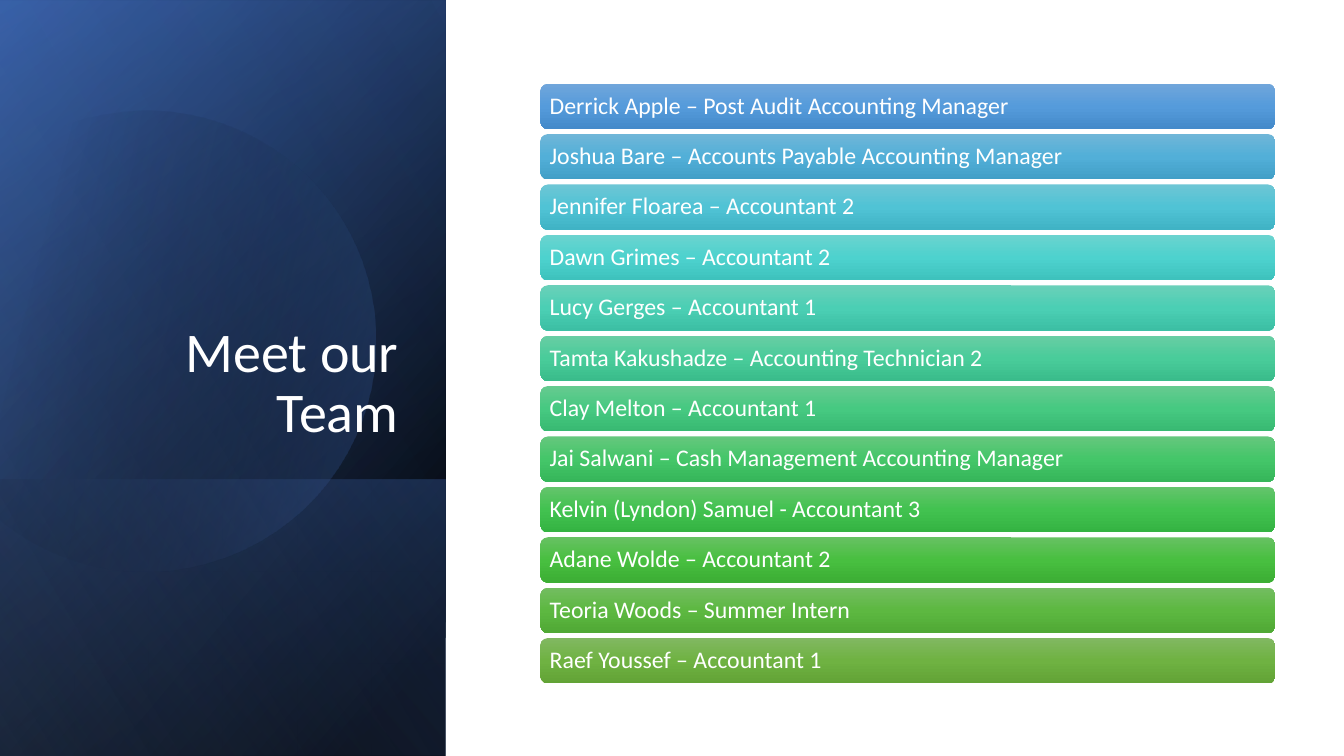
from dataclasses import dataclass
from math import cos, radians, sin

from lxml.etree import SubElement
from pptx import Presentation
from pptx.dml.color import RGBColor
from pptx.enum.shapes import MSO_SHAPE
from pptx.enum.text import MSO_ANCHOR, PP_ALIGN
from pptx.oxml.ns import qn
from pptx.shapes.autoshape import Shape
from pptx.slide import Slide
from pptx.util import Inches, Pt

FONT = "Calibri"
COLORS = {
    "white": "FFFFFF",
    "black": "000000",
    "navy": "2F5597",
    "blue": "4472C4",
    "pale blue": "8FAADC",
}


@dataclass
class Stop:
    position: int
    color: str
    opacity: int = 100


@dataclass
class Panel:
    left: float
    top: float
    width: float
    angle: int
    stops: list[Stop]


@dataclass
class Member:
    label: str
    light: str
    middle: str
    dark: str


PANEL_HEIGHT = 4.42
BASE_PANELS = [
    Panel(-1.54, 1.54, 7.5, 50, [Stop(8, COLORS["black"]), Stop(100, COLORS["navy"])]),
    Panel(-1.54, 1.55, 7.5, 30, [Stop(0, COLORS["black"], 0), Stop(99, COLORS["blue"], 46)]),
    Panel(0.84, 3.92, 2.74, 130, [Stop(2, COLORS["blue"], 29), Stop(100, COLORS["black"], 30)]),
]
TOP_PANEL = Panel(-1.54, 1.54, 7.5, 120, [Stop(0, COLORS["black"], 0), Stop(99, COLORS["pale blue"], 11)])

# Outline of the disc as it lies on the slide: Bezier curves and straight edges
DISC_START = (1.49, 1.1)
DISC_SEGMENTS = [
    [(2.46, 1.12), (3.35, 1.77), (3.63, 2.75)],
    [(3.98, 3.97), (3.28, 5.23), (2.07, 5.58)],
    [(1.31, 5.8), (0.53, 5.61), (-0.03, 5.14)],
    [(-0.15, 5.03)],
    [(-0.15, 1.75)],
    [(0, 1.61)],
    [(0.23, 1.42), (0.5, 1.28), (0.8, 1.19)],
    [(1.03, 1.13), (1.26, 1.1), (1.49, 1.1)],
]
DISC_CENTER = (1.58, 3.35)
DISC_ROTATION = 343.9
CURVE_STEPS = 20

MEMBERS = [
    Member("Derrick Apple – Post Audit Accounting Manager", "71A6DB", "559BDB", "448ACA"),
    Member("Joshua Bare – Accounts Payable Accounting Manager", "6FB6D8", "52AFD8", "429FC7"),
    Member("Jennifer Floarea – Accountant 2", "6DC6D5", "50C3D5", "40B3C5"),
    Member("Dawn Grimes – Accountant 2", "6BD3CF", "4DD2CE", "3EC2BD"),
    Member("Lucy Gerges – Accountant 1", "6AD0B9", "4BCFB4", "3CBFA4"),
    Member("Tamta Kakushadze – Accounting Technician 2", "68CDA4", "49CC9A", "3ABC8B"),
    Member("Clay Melton – Accountant 1", "66CA90", "46C981", "38B972"),
    Member("Jai Salwani – Cash Management Accounting Manager", "65C77D", "44C669", "36B65A"),
    Member("Kelvin (Lyndon) Samuel - Accountant 3", "64C46C", "42C250", "34B342"),
    Member("Adane Wolde – Accountant 2", "67C162", "48BF40", "3CAE34"),
    Member("Teoria Woods – Summer Intern", "73BD61", "5DB841", "50A935"),
    Member("Raef Youssef – Accountant 1", "81B861", "6FB242", "62A336"),
]
BAR_LEFT, BAR_TOP, BAR_WIDTH, BAR_HEIGHT, BAR_PITCH = 5.36, 0.83, 7.29, 0.45, 0.5
BAR_INSET = 0.07


def fill_gradient(shape: Shape, stops: list[Stop], angle: int) -> None:
    """Fill a shape with a linear gradient, without outline or shadow."""
    shape.shadow.inherit = False
    shape.line.fill.background()
    shape.fill.gradient()
    gradient = shape.element.spPr.find(qn("a:gradFill"))
    gradient.clear()
    gradient.set("rotWithShape", "1")
    stop_list = SubElement(gradient, qn("a:gsLst"))
    for stop in stops:
        entry = SubElement(stop_list, qn("a:gs"), pos=str(stop.position * 1000))
        color = SubElement(entry, qn("a:srgbClr"), val=stop.color)
        if stop.opacity < 100:
            SubElement(color, qn("a:alpha"), val=str(stop.opacity * 1000))
    SubElement(gradient, qn("a:lin"), ang=str(angle * 60000), scaled="0")


def add_panel(slide: Slide, panel: Panel) -> None:
    shape = slide.shapes.add_shape(
        MSO_SHAPE.RECTANGLE, Inches(panel.left), Inches(panel.top), Inches(panel.width), Inches(PANEL_HEIGHT)
    )
    shape.rotation = 90
    shape.element.spPr.find(qn("a:xfrm")).set("flipH", "1")
    fill_gradient(shape, panel.stops, panel.angle)


def disc_points() -> list[tuple[float, float]]:
    """Trace the disc, sampling each cubic curve evenly."""
    points = [DISC_START]
    for segment in DISC_SEGMENTS:
        if len(segment) == 1:
            points += segment
            continue
        corners = [points[-1], *segment]
        for step in range(1, CURVE_STEPS + 1):
            t = step / CURVE_STEPS
            weights = [(1 - t) ** 3, 3 * t * (1 - t) ** 2, 3 * t**2 * (1 - t), t**3]
            x, y = (sum(w * corner[axis] for w, corner in zip(weights, corners)) for axis in (0, 1))
            points.append((x, y))
    return points


def unrotate(point: tuple[float, float]) -> tuple[int, int]:
    """Turn a point back about the disc centre, ready for the shape's own rotation."""
    turn = radians(-DISC_ROTATION)
    x, y = point[0] - DISC_CENTER[0], point[1] - DISC_CENTER[1]
    return (
        Inches(DISC_CENTER[0] + x * cos(turn) - y * sin(turn)),
        Inches(DISC_CENTER[1] + x * sin(turn) + y * cos(turn)),
    )


def add_disc(slide: Slide) -> None:
    first, *rest = [unrotate(point) for point in disc_points()]
    builder = slide.shapes.build_freeform(*first)
    builder.add_line_segments(rest, close=True)
    disc = builder.convert_to_shape()
    disc.rotation = DISC_ROTATION
    fill_gradient(disc, [Stop(29, COLORS["black"], 0), Stop(100, COLORS["blue"], 43)], 30)


def write_text(shape: Shape, text: str, size: int, align: PP_ALIGN, anchor: MSO_ANCHOR) -> None:
    frame = shape.text_frame
    frame.word_wrap = True
    frame.vertical_anchor = anchor
    paragraph = frame.paragraphs[0]
    paragraph.text = text
    paragraph.alignment = align
    paragraph.line_spacing = 0.9
    paragraph.font.name = FONT
    paragraph.font.size = Pt(size)
    paragraph.font.color.rgb = RGBColor.from_string(COLORS["white"])


def add_member_bar(slide: Slide, member: Member, top: float) -> None:
    bar = slide.shapes.add_shape(
        MSO_SHAPE.ROUNDED_RECTANGLE, Inches(BAR_LEFT), Inches(top), Inches(BAR_WIDTH), Inches(BAR_HEIGHT)
    )
    fill_gradient(bar, [Stop(0, member.light), Stop(50, member.middle), Stop(100, member.dark)], 90)
    frame = bar.text_frame
    frame.margin_left = frame.margin_right = Inches(BAR_INSET)
    frame.margin_top = frame.margin_bottom = Inches(BAR_INSET)
    write_text(bar, member.label, 17, PP_ALIGN.LEFT, MSO_ANCHOR.MIDDLE)


def main() -> None:
    presentation = Presentation()
    presentation.slide_width = Inches(13.33)
    presentation.slide_height = Inches(7.5)
    slide = presentation.slides.add_slide(presentation.slide_layouts[6])

    # Blue side panel
    for panel in BASE_PANELS:
        add_panel(slide, panel)
    add_disc(slide)
    add_panel(slide, TOP_PANEL)

    # Title
    title = slide.shapes.add_textbox(Inches(0.64), Inches(1.84), Inches(3.41), Inches(2.62))
    write_text(title, "Meet our Team", 40, PP_ALIGN.RIGHT, MSO_ANCHOR.BOTTOM)

    # Team list
    for row, member in enumerate(MEMBERS):
        add_member_bar(slide, member, BAR_TOP + row * BAR_PITCH)

    presentation.save("out.pptx")


if __name__ == "__main__":
    main()
